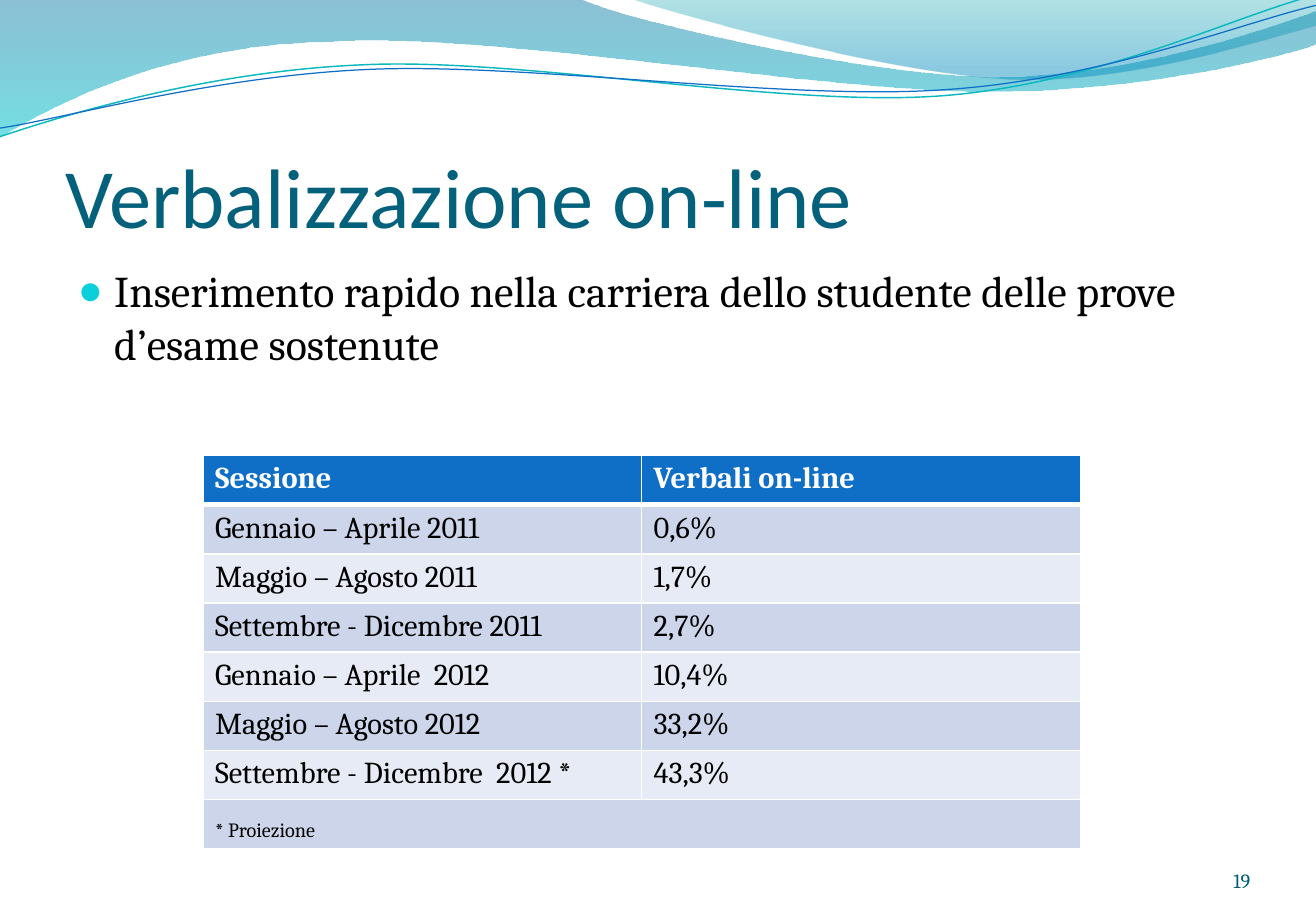
"""Build the slide on online exam registration with python-pptx."""
from dataclasses import dataclass

from lxml import etree
from pptx import Presentation
from pptx.dml.color import RGBColor
from pptx.enum.text import MSO_ANCHOR, PP_ALIGN
from pptx.oxml.ns import qn
from pptx.util import Inches, Pt

BOTTOM, TOP = MSO_ANCHOR.BOTTOM, MSO_ANCHOR.TOP
LEFT, RIGHT = PP_ALIGN.LEFT, PP_ALIGN.RIGHT


@dataclass(frozen=True)
class Theme:
    """Colours, fonts and type sizes of the slide."""
    title: str = "04617B"
    text: str = "000000"
    white: str = "FFFFFF"
    number: str = "045D75"
    bullet: str = "0BD0D9"
    header: str = "0F6FC6"
    bands: tuple = ("CCD5EA", "E7EBF5")
    teal_line: str = "0AB8BF"
    lower_wave: tuple = ((0, "0074A1", 45), (1, "00C6CF", 55))
    upper_wave: tuple = ((0, "00A1A9", 30), (0.8, "008BBF", 45))
    title_font: str = "Calibri"
    body_font: str = "Cambria"
    title_size: int = 50
    body_size: int = 26
    table_size: int = 18
    small_size: int = 12


def add_child(parent, tag, **attributes):
    """Append a DrawingML element and return it."""
    values = {name: str(value) for name, value in attributes.items()}
    return etree.SubElement(parent, qn(tag), values)


def write_text(frame, text, font, size, color, bold=False, align=LEFT):
    """Write one formatted paragraph into a text frame and return it."""
    paragraph = frame.paragraphs[0]
    paragraph.alignment = align
    run = paragraph.add_run()
    run.text = text
    run.font.name = font
    run.font.size = Pt(size)
    run.font.bold = bold
    run.font.color.rgb = RGBColor.from_string(color)
    return paragraph


def bend(shape, segments):
    """Turn each three lines of a six-number segment into one cubic curve."""
    lines = iter(list(shape._element.iter(qn("a:lnTo"))))
    for segment in segments:
        line = next(lines)
        if len(segment) == 2:
            continue
        curve = etree.Element(qn("a:cubicBezTo"))
        line.addprevious(curve)
        for part in (line, next(lines), next(lines)):
            curve.append(part[0])
            part.getparent().remove(part)


class SlideBuilder:
    """Hold the theme and the current slide, and add elements to it."""

    def __init__(self, presentation, theme):
        """Add a slide with a title and a body placeholder."""
        self.theme = theme
        self.slide = presentation.slides.add_slide(presentation.slide_layouts[1])

    def outline(self, start, segments, closed):
        """Add a freeform of lines (2 numbers) and cubic curves (6 numbers)."""
        points = [(Inches(segment[i]), Inches(segment[i + 1]))
                  for segment in segments for i in range(0, len(segment), 2)]
        builder = self.slide.shapes.build_freeform(Inches(start[0]), Inches(start[1]))
        builder.add_line_segments(points, close=closed)
        shape = builder.convert_to_shape()
        bend(shape, segments)
        shape.shadow.inherit = False
        return shape

    def wave(self, start, segments, stops):
        """Add a closed wave with a transparent vertical gradient."""
        shape = self.outline(start, segments, True)
        shape.line.fill.background()
        shape.fill.gradient()
        shape.fill.gradient_angle = 270
        for stop, (position, color, opacity) in zip(shape.fill.gradient_stops, stops):
            stop.position = position
            stop.color.rgb = RGBColor.from_string(color)
            color_element = stop._gs.find(qn("a:srgbClr"))
            add_child(color_element, "a:alpha", val=opacity * 1000)

    def wave_line(self, start, segments, color, width):
        """Add an open curved line, slightly turned."""
        shape = self.outline(start, segments, False)
        shape.rotation = 357.3
        shape.fill.background()
        shape.line.color.rgb = RGBColor.from_string(color)
        shape.line.width = Pt(width)

    def place(self, placeholder, left, top, width, height):
        """Move a placeholder in front of the waves and return its text frame."""
        placeholder.left, placeholder.top = Inches(left), Inches(top)
        placeholder.width, placeholder.height = Inches(width), Inches(height)
        self.slide.shapes._spTree.append(placeholder._element)
        return placeholder.text_frame

    def title(self, text, *box):
        """Fill the title placeholder."""
        frame = self.place(self.slide.shapes.title, *box)
        frame.vertical_anchor = BOTTOM
        frame.margin_left = frame.margin_right = frame.margin_bottom = 0
        write_text(frame, text, self.theme.title_font, self.theme.title_size, self.theme.title)

    def bullet(self, text, *box):
        """Fill the body placeholder with one bulleted paragraph."""
        frame = self.place(self.slide.placeholders[1], *box)
        frame.vertical_anchor = TOP
        paragraph = write_text(frame, text, self.theme.body_font,
                               self.theme.body_size, self.theme.text)
        properties = paragraph._p.get_or_add_pPr()
        properties.set("marL", str(Inches(0.3)))
        properties.set("indent", str(Inches(-0.3)))
        add_child(add_child(properties, "a:buClr"), "a:srgbClr", val=self.theme.bullet)
        add_child(properties, "a:buSzPct", val=95000)
        add_child(properties, "a:buChar", char="●")

    def page_number(self, text, left, top, width, height):
        """Add the page number at the lower right."""
        box = self.slide.shapes.add_textbox(Inches(left), Inches(top),
                                            Inches(width), Inches(height))
        frame = box.text_frame
        frame.word_wrap = True
        frame.vertical_anchor = BOTTOM
        frame.margin_left = frame.margin_right = frame.margin_top = frame.margin_bottom = 0
        write_text(frame, text, self.theme.body_font, self.theme.small_size,
                   self.theme.number, align=RIGHT)

    def format_cell(self, cell, row, fill):
        """Give a cell white borders and a solid fill."""
        properties = cell._tc.get_or_add_tcPr()
        widths = {"L": 1, "R": 1, "T": 3 if row == 1 else 1, "B": 3 if row == 0 else 1}
        for side, width in widths.items():
            border = add_child(properties, f"a:ln{side}", w=Pt(width))
            add_child(add_child(border, "a:solidFill"), "a:srgbClr", val=self.theme.white)
        cell.fill.solid()
        cell.fill.fore_color.rgb = RGBColor.from_string(fill)
        cell.margin_left = cell.margin_right = Inches(0.1)
        cell.margin_top = cell.margin_bottom = Inches(0.05)

    def table(self, rows, note, left, top, width, height):
        """Add a banded table whose last row is a merged note."""
        theme = self.theme
        table = self.slide.shapes.add_table(len(rows) + 1, len(rows[0]), Inches(left),
                                            Inches(top), Inches(width), Inches(height)).table
        for row in range(len(rows) + 1):
            fill = theme.bands[(row - 1) % 2] if row else theme.header
            for cell in table.rows[row].cells:
                self.format_cell(cell, row, fill)
        for row, values in enumerate(rows):
            for column, value in enumerate(values):
                write_text(table.cell(row, column).text_frame, value, theme.body_font,
                           theme.table_size, theme.text if row else theme.white, bold=row == 0)
        note_cell = table.cell(len(rows), 0)
        note_cell.merge(table.cell(len(rows), len(rows[0]) - 1))
        note_cell.vertical_anchor = BOTTOM
        write_text(note_cell.text_frame, note, theme.body_font, theme.small_size, theme.text)


def main():
    """Build and save the presentation."""
    presentation = Presentation()
    presentation.slide_width, presentation.slide_height = Inches(10.83), Inches(7.5)
    theme = Theme()
    builder = SlideBuilder(presentation, theme)
    builder.wave((0, 0), [(4.77, -0.01), (5.15, 0.17, 7.19, 0.63, 8.22, 0.63),
                          (9.24, 0.63, 10.38, 0.26, 10.83, 0.09), (10.84, 0.36),
                          (10.65, 0.44, 9.42, 0.76, 8.08, 0.75),
                          (6.74, 0.75, 4.14, 0.28, 2.79, 0.34),
                          (1.4, 0.36, 0.5, 0.83, -0.01, 1.13)], theme.lower_wave)
    builder.wave((5.19, -0.01), [(5.52, 0.11, 7.39, 0.62, 8.33, 0.65),
                                 (9.27, 0.69, 10.42, 0.32, 10.83, 0.21),
                                 (10.83, 0)], theme.upper_wave)
    builder.wave_line((-0.02, 0.87), [(0.51, 0.72, 1.71, 0.41, 3, 0.42),
                                      (4.29, 0.42, 6.4, 0.93, 7.71, 0.9),
                                      (9.01, 0.87, 10.19, 0.35, 10.83, 0.22)],
                      theme.teal_line, 0.85)
    builder.wave_line((-0.02, 0.8), [(0.5, 0.75, 1.77, 0.45, 3.07, 0.46),
                                     (4.36, 0.47, 6.46, 0.88, 7.75, 0.85),
                                     (9.05, 0.83, 10.21, 0.42, 10.85, 0.3)], theme.header, 0.75)
    builder.title("Verbalizzazione on-line", 0.54, 0.77, 7.57, 1.25)
    builder.bullet("Inserimento rapido nella carriera dello studente delle prove "
                   "d’esame sostenute", 0.54, 2.12, 9.75, 4.8)
    builder.page_number("19", 9.39, 6.95, 0.9, 0.4)
    sessions = [("Sessione", "Verbali on-line"), ("Gennaio – Aprile 2011", "0,6%"),
                ("Maggio – Agosto 2011", "1,7%"), ("Settembre - Dicembre 2011", "2,7%"),
                ("Gennaio – Aprile  2012", "10,4%"), ("Maggio – Agosto 2012", "33,2%"),
                ("Settembre - Dicembre  2012 *", "43,3%")]
    builder.table(sessions, "* Proiezione", 1.67, 3.75, 7.22, 3.24)
    presentation.save("out.pptx")


if __name__ == "__main__":
    main()
